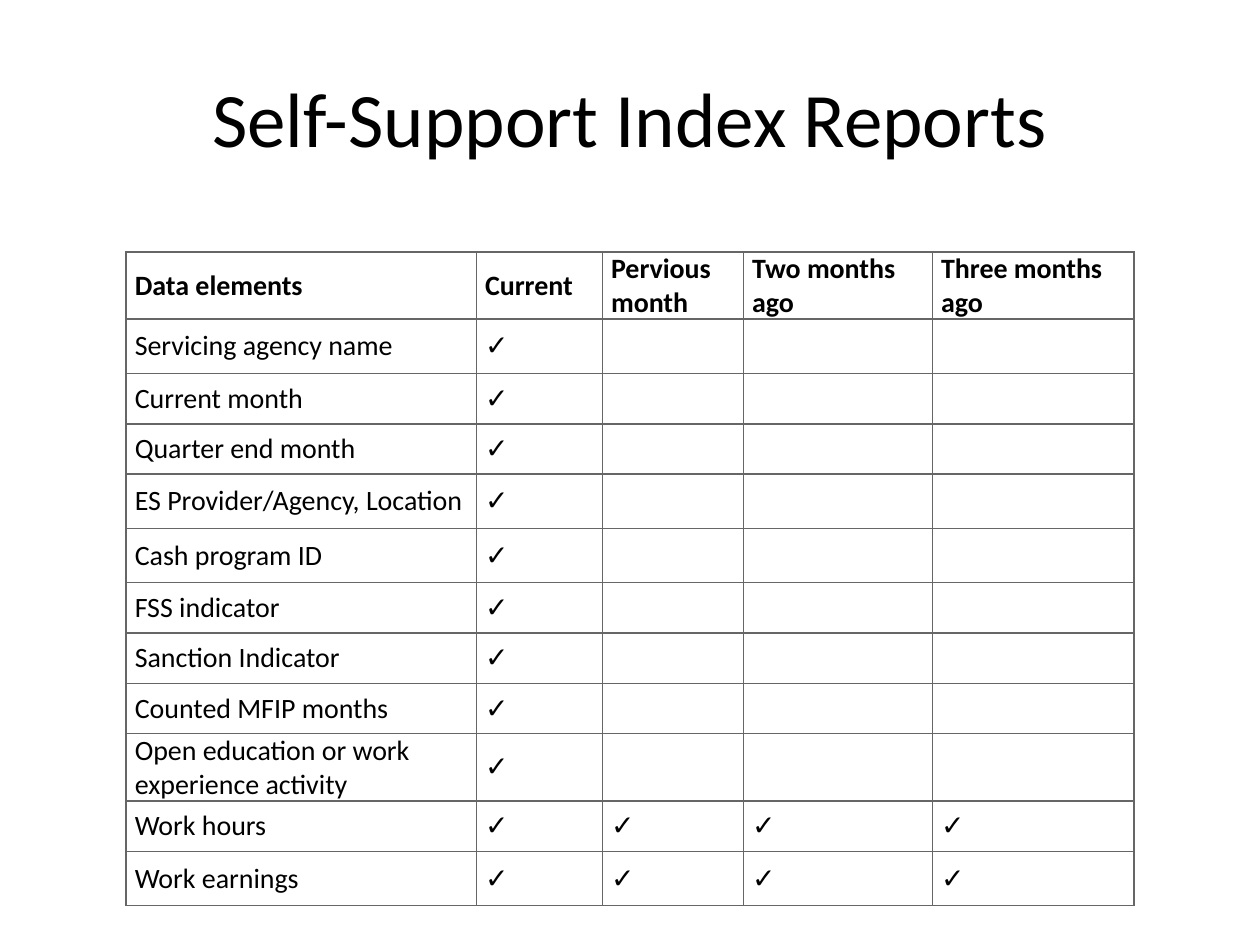
from dataclasses import dataclass

from lxml import etree
from pptx import Presentation
from pptx import util as u
from pptx.dml.color import RGBColor
from pptx.enum import text
from pptx.oxml import ns


@dataclass(frozen=True)
class Theme:
    font: str = "Calibri"
    ink: str = "000000"
    border: str = "666666"
    title_size: int = 44
    body_size: int = 16
    border_width: float = 1
    paragraph_gap: int = 5
    indent: float = 0.07


THEME = Theme()
WIDTH, HEIGHT = u.Inches(10), u.Inches(7.5)
CHECK = "✓"
HEADINGS = ["Data elements", "Current", "Pervious month", "Two months ago", "Three months ago"]
COLUMN_WIDTHS = [2.78, 1, 1.12, 1.5, 1.6]
TALL, SHORT = 0.43, 0.4
REPORT_ROWS = [
    ("Servicing agency name", 1, TALL),
    ("Current month", 1, SHORT),
    ("Quarter end month", 1, SHORT),
    ("ES Provider/Agency, Location", 1, TALL),
    ("Cash program ID", 1, TALL),
    ("FSS indicator", 1, SHORT),
    ("Sanction Indicator", 1, SHORT),
    ("Counted MFIP months", 1, SHORT),
    ("Open education or work experience activity", 1, TALL),
    ("Work hours", 4, SHORT),
    ("Work earnings", 4, TALL),
]


def apply(target, values):
    for name, value in values.items():
        setattr(target, name, value)


def write(paragraph, words, size, bold=False):
    run = paragraph.add_run()
    run.text = words
    apply(run.font, {"name": THEME.font, "size": u.Pt(size), "bold": bold})
    run.font.color.rgb = RGBColor.from_string(THEME.ink)


def add_title(slide, words):
    box = slide.shapes.add_textbox(
        int(WIDTH * 0.05), int(HEIGHT * 0.04), int(WIDTH * 0.9), u.Inches(1.25)
    )
    apply(box.text_frame, {"word_wrap": True, "vertical_anchor": text.MSO_ANCHOR.MIDDLE})
    paragraph = box.text_frame.paragraphs[0]
    paragraph.alignment = text.PP_ALIGN.CENTER
    write(paragraph, words, THEME.title_size)


def draw_borders(cell):
    properties = cell._tc.get_or_add_tcPr()
    for position, side in enumerate(("lnL", "lnR", "lnT", "lnB")):
        line = etree.Element(ns.qn(f"a:{side}"), w=str(u.Pt(THEME.border_width)))
        fill = etree.SubElement(line, ns.qn("a:solidFill"))
        etree.SubElement(fill, ns.qn("a:srgbClr"), val=THEME.border)
        properties.insert(position, line)


def fill_cell(cell, words, bold):
    apply(cell, {
        "margin_left": 0, "margin_right": 0, "margin_top": 0, "margin_bottom": 0,
        "vertical_anchor": text.MSO_ANCHOR.MIDDLE,
    })
    cell.fill.background()
    draw_borders(cell)
    paragraph = cell.text_frame.paragraphs[0]
    paragraph.font.size = u.Pt(THEME.body_size)
    if words:
        gap = u.Pt(THEME.paragraph_gap)
        apply(paragraph, {"space_before": gap, "space_after": gap})
        paragraph._p.get_or_add_pPr().set("marL", str(u.Inches(THEME.indent)))
        write(paragraph, words, THEME.body_size, bold)


def add_report_table(slide):
    blanks = len(HEADINGS) - 1
    rows = [HEADINGS] + [
        [label] + [CHECK] * checks + [""] * (blanks - checks)
        for label, checks, _ in REPORT_ROWS
    ]
    heights = [TALL] + [height for *_, height in REPORT_ROWS]
    table = slide.shapes.add_table(
        len(rows), len(HEADINGS), u.Inches(1), u.Inches(2),
        u.Inches(sum(COLUMN_WIDTHS)), u.Inches(sum(heights)),
    ).table
    apply(table, {"first_row": False, "horz_banding": False})
    for column, width in zip(table.columns, COLUMN_WIDTHS):
        column.width = u.Inches(width)
    for index, (row, height, words) in enumerate(zip(table.rows, heights, rows)):
        row.height = u.Inches(height)
        for cell, entry in zip(row.cells, words):
            fill_cell(cell, entry, bold=index == 0)


def main():
    presentation = Presentation()
    apply(presentation, {"slide_width": WIDTH, "slide_height": HEIGHT})
    slide = presentation.slides.add_slide(presentation.slide_layouts[6])
    add_title(slide, "Self-Support Index Reports")
    add_report_table(slide)
    presentation.save("out.pptx")


if __name__ == "__main__":
    main()
